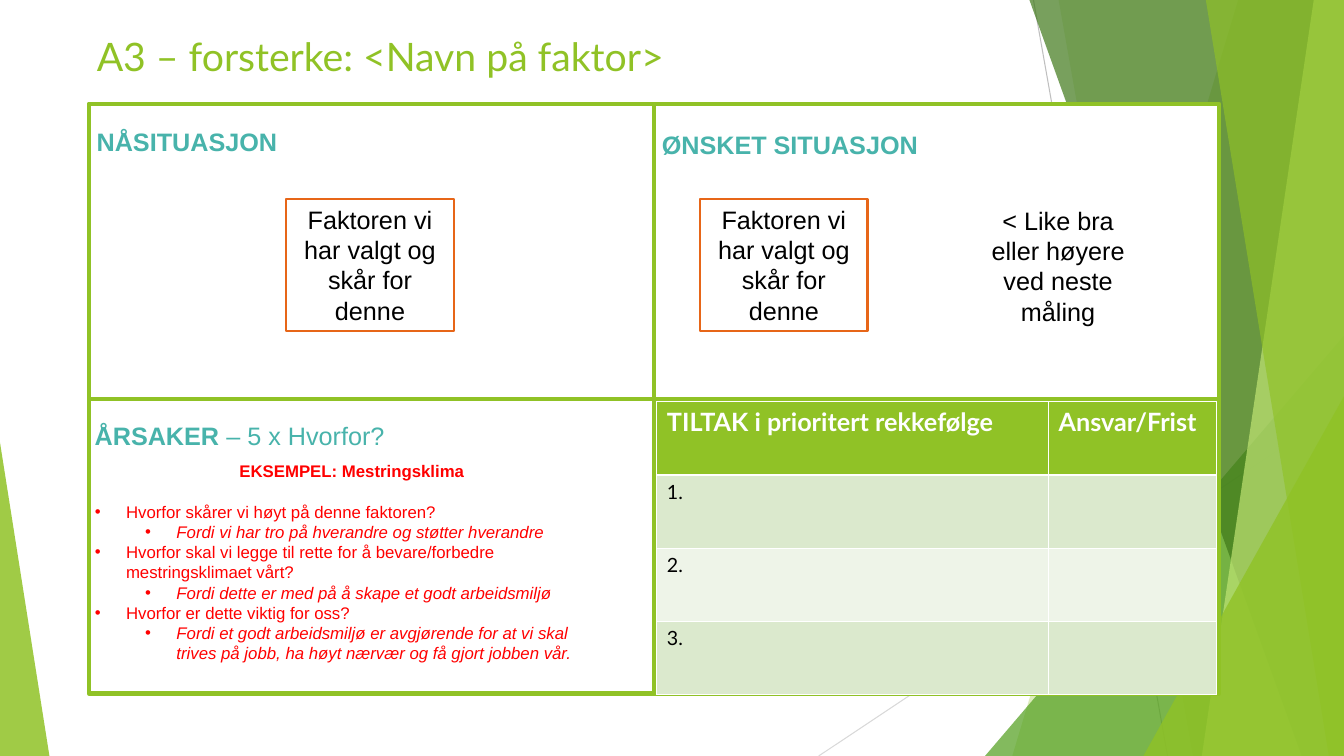
from dataclasses import dataclass

from lxml import etree
from pptx import Presentation
from pptx import util as u
from pptx.dml.color import RGBColor
from pptx.enum import shapes, text
from pptx.oxml.ns import qn

WIDTH, HEIGHT = 13.33, 7.5
COLORS = {
    "green": "90C226", "leaf": "54A021", "forest": "3F7819", "lime": "C0E474",
    "teal": "48B3AB", "orange": "E76618", "red": "FF0000", "black": "000000",
    "white": "FFFFFF", "band": "DBE9CD", "pale": "EEF4E8",
    "gray": "BFBFBF", "silver": "D9D9D9",
}


@dataclass
class Box:
    left: float
    top: float
    width: float
    height: float

    def emu(self):
        return [u.Inches(n) for n in (self.left, self.top, self.width, self.height)]

    def inner(self, right, down, width, height):
        return Box(self.left + right, self.top + down, width, height)

    def cell(self, column, row, columns=2, rows=2):
        width, height = self.width / columns, self.height / rows
        return self.inner(column * width, row * height, width, height)


def color(name):
    return RGBColor.from_string(COLORS[name])


def write(paragraph, words, size=18, font="Arial", ink="black", bold=False,
          italic=False, align=text.PP_ALIGN.LEFT):
    paragraph.alignment = align
    run = paragraph.add_run()
    run.text = words
    run.font.size = u.Pt(size)
    run.font.name = font
    run.font.bold = bold
    run.font.italic = italic
    run.font.color.rgb = color(ink)


def style(shape, fill, line=None, weight=1.5, opacity=None):
    shape.shadow.inherit = False
    shape.fill.solid()
    shape.fill.fore_color.rgb = color(fill)
    if opacity:
        tint = shape.fill._xPr.find(qn("a:solidFill"))[0]
        etree.SubElement(tint, qn("a:alpha"), val=str(opacity * 1000))
    if line:
        shape.line.color.rgb = color(line)
        shape.line.width = u.Pt(weight)
    else:
        shape.line.fill.background()


def add_rule(slide, start, end, ink, weight):
    points = [u.Inches(n) for n in (*start, *end)]
    rule = slide.shapes.add_connector(shapes.MSO_CONNECTOR.STRAIGHT, *points)
    rule.line.color.rgb = color(ink)
    rule.line.width = u.Pt(weight)
    etree.SubElement(rule._element.spPr, qn("a:effectLst"))
    return rule


def add_label(slide, box, anchor=text.MSO_ANCHOR.TOP):
    frame = slide.shapes.add_textbox(*box.emu()).text_frame
    frame.word_wrap = True
    frame.vertical_anchor = anchor
    return frame.paragraphs[0]


def add_facet(slide, page, top_x, bottom_x, fill, opacity):
    builder = slide.shapes.build_freeform(u.Inches(top_x), 0)
    corners = [(page.width, 0), (page.width, page.height), (bottom_x, page.height)]
    builder.add_line_segments([(u.Inches(x), u.Inches(y)) for x, y in corners])
    style(builder.convert_to_shape(), fill, opacity=opacity)


def add_triangle(slide, box, apex, fill, opacity):
    triangle = slide.shapes.add_shape(shapes.MSO_SHAPE.ISOSCELES_TRIANGLE, *box.emu())
    triangle.adjustments[0] = apex
    style(triangle, fill, opacity=opacity)


def add_backdrop(slide, page):
    add_rule(slide, (10.25, 0), (11.58, page.height), "gray", 0.75)
    add_rule(slide, (page.width, 4.03), (8.12, page.height), "silver", 0.75)
    add_facet(slide, page, 12.28, 10.04, "green", 30)
    add_facet(slide, page, 10.5, 11.83, "green", 20)
    add_triangle(slide, Box(9.77, 3.33, 3.56, 4.17), 1, "leaf", 72)
    add_facet(slide, page, 10.21, 12.91, "forest", 70)
    add_facet(slide, page, 13.03, 11.92, "lime", 70)
    add_facet(slide, page, 11.96, 13.18, "green", 65)
    add_triangle(slide, Box(11.34, 3.93, 1.99, 3.57), 1, "green", 80)
    add_triangle(slide, Box(0, 4.39, 0.49, 3.11), 0, "green", 85)


def add_panel(slide, box):
    panel = slide.shapes.add_shape(shapes.MSO_SHAPE.RECTANGLE, *box.emu())
    style(panel, "white", "green", 3)
    for first, last in ((0, 2), (1, 3)):
        divider = add_rule(slide, (0, 0), (1, 1), "green", 3)
        divider.begin_connect(panel, first)
        divider.end_connect(panel, last)


def place(placeholder, box):
    placeholder.left, placeholder.top, placeholder.width, placeholder.height = box.emu()
    placeholder.element.getparent().append(placeholder.element)
    frame = placeholder.text_frame
    frame.word_wrap = True
    frame.auto_size = text.MSO_AUTO_SIZE.NONE
    frame.vertical_anchor = text.MSO_ANCHOR.TOP
    return frame


def add_title(slide, box):
    frame = place(slide.shapes.title, box)
    write(frame.paragraphs[0], "A3 – forsterke: <Navn på faktor>",
          size=28, font="Lato", ink="green")


def add_factor_card(slide, box):
    card = slide.shapes.add_shape(shapes.MSO_SHAPE.RECTANGLE, *box.emu())
    style(card, "white", "orange")
    card.text_frame.word_wrap = True
    card.text_frame.vertical_anchor = text.MSO_ANCHOR.MIDDLE
    write(card.text_frame.paragraphs[0], "Faktoren vi har valgt og skår for denne",
          align=text.PP_ALIGN.CENTER)


def add_current_state(slide, box):
    heading = add_label(slide, box.inner(-0.02, 0.17, box.width, 0.4))
    write(heading, "NÅSITUASJON", ink="teal", bold=True)
    add_factor_card(slide, box.inner(1.96, 0.94, 1.66, 1.31))


def add_desired_state(slide, box):
    heading = add_label(slide, box.inner(-0.02, 0.2, box.width, 0.4))
    write(heading, "ØNSKET SITUASJON", ink="teal", bold=True)
    add_factor_card(slide, box.inner(0.46, 0.94, 1.66, 1.31))
    goal = add_label(slide, box.inner(3.18, 0.95, 1.66, 1.31), text.MSO_ANCHOR.MIDDLE)
    write(goal, "< Like bra eller høyere ved neste måling", align=text.PP_ALIGN.CENTER)


def set_bullet(paragraph, margin, hanging, mark=None):
    properties = paragraph._p.get_or_add_pPr()
    properties.set("marL", str(u.Inches(margin)))
    properties.set("indent", str(-u.Inches(hanging)))
    if mark:
        etree.SubElement(properties, qn("a:buChar"), char=mark)
    else:
        etree.SubElement(properties, qn("a:buNone"))


def add_causes(slide, box):
    heading = add_label(slide, box.inner(-0.04, 0.17, 3.52, 0.4))
    write(heading, "ÅRSAKER ", ink="teal", bold=True)
    write(heading, "– 5 x Hvorfor?", ink="teal")

    frame = place(slide.placeholders[1], box.inner(-0.04, 0.57, 5.3, 2.42))
    example = frame.paragraphs[0]
    write(example, "EKSEMPEL: Mestringsklima", size=12, ink="red", bold=True,
          align=text.PP_ALIGN.CENTER)
    example.space_before = u.Pt(0)
    set_bullet(example, 0, 0)
    reasons = [
        ("Hvorfor skårer vi høyt på denne faktoren?",
         "Fordi vi har tro på hverandre og støtter hverandre"),
        ("Hvorfor skal vi legge til rette for å bevare/forbedre mestringsklimaet vårt?",
         "Fordi dette er med på å skape et godt arbeidsmiljø"),
        ("Hvorfor er dette viktig for oss?",
         "Fordi et godt arbeidsmiljø er avgjørende for at vi skal trives på jobb, "
         "ha høyt nærvær og få gjort jobben vår."),
    ]
    for index, pair in enumerate(reasons):
        for level, words in enumerate(pair):
            paragraph = frame.add_paragraph()
            paragraph.level = level
            write(paragraph, words, size=12, ink="red", italic=level == 1)
            paragraph.space_before = u.Pt(14.5 if index == level == 0 else 0)
            set_bullet(paragraph, 0.31 + 0.5 * level, 0.31, "•")


def add_actions(slide, box):
    area = box.inner(0.03, 0.03, 5.55, 2.91)
    rows = [("TILTAK i prioritert rekkefølge", "Ansvar/Frist"),
            ("1.", ""), ("2.", ""), ("3.", "")]
    table = slide.shapes.add_table(len(rows), 2, *area.emu()).table
    for column, share in zip(table.columns, (0.7, 0.3)):
        column.width = u.Inches(area.width * share)
    for row, values in enumerate(rows):
        for column, words in enumerate(values):
            cell = table.cell(row, column)
            cell.fill.solid()
            cell.fill.fore_color.rgb = color(("green", "band", "pale", "band")[row])
            if words:
                header = row == 0
                write(cell.text_frame.paragraphs[0], words, size=18 if header else 14,
                      font="Lato", ink="white" if header else "black", bold=header)


def main():
    presentation = Presentation()
    presentation.slide_width, presentation.slide_height = u.Inches(WIDTH), u.Inches(HEIGHT)
    slide = presentation.slides.add_slide(presentation.slide_layouts[1])
    panel = Box(0.88, 1.03, 11.21, 5.85)
    add_backdrop(slide, Box(0, 0, WIDTH, HEIGHT))
    add_panel(slide, panel)
    add_title(slide, Box(0.86, 0.27, 12.23, 0.68))
    add_current_state(slide, panel.cell(0, 0))
    add_desired_state(slide, panel.cell(1, 0))
    add_causes(slide, panel.cell(0, 1))
    add_actions(slide, panel.cell(1, 1))
    presentation.save("out.pptx")


if __name__ == "__main__":
    main()
